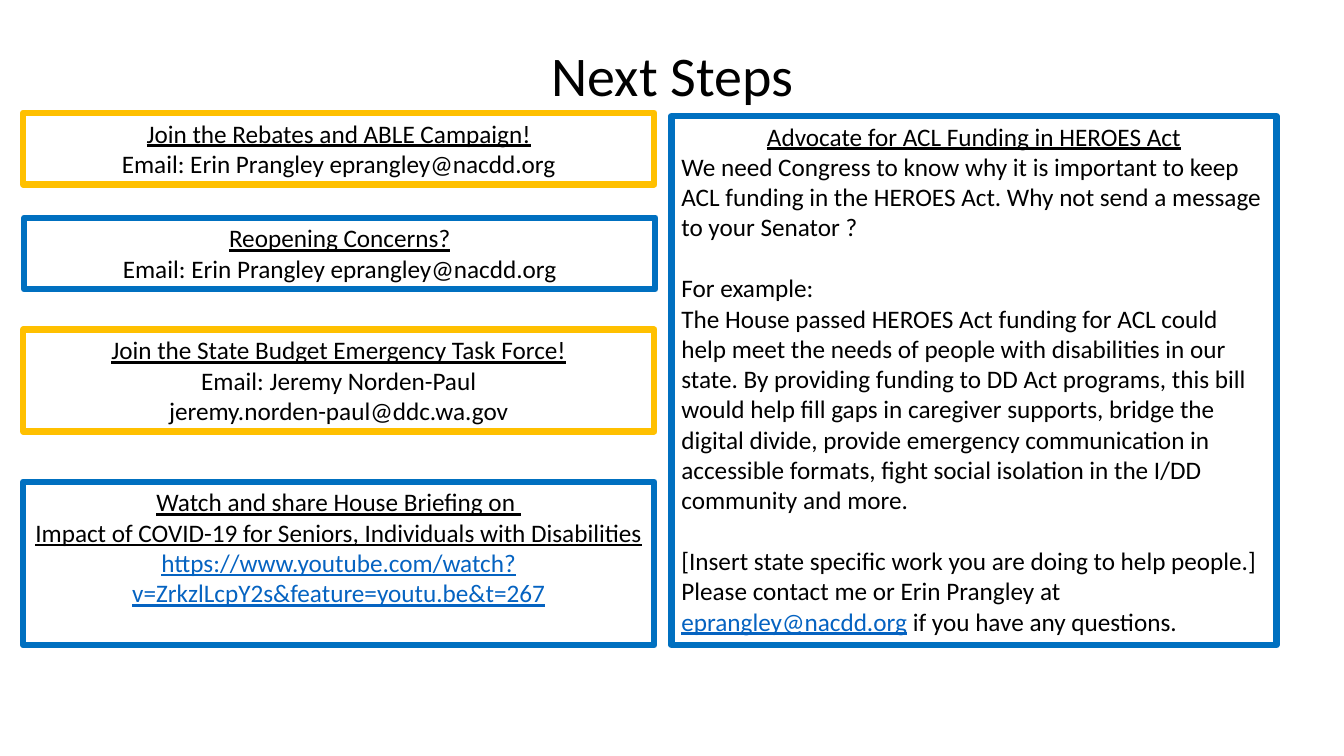
from dataclasses import dataclass

from pptx import Presentation
from pptx.dml.color import RGBColor
from pptx.enum import text as txt
from pptx.util import Inches, Pt

FONT = "Calibri"
BLACK, BLUE, GOLD, LINK = "000000", "0070C0", "FFC000", "0563C1"
BODY_SIZE = 18
BLANK_LINE = 22
CENTER, LEFT = txt.PP_ALIGN.CENTER, txt.PP_ALIGN.LEFT


@dataclass
class Passage:
    """A paragraph: plain text, then an optional link-coloured part and tail."""
    text: str
    underline: bool = False
    link: str = ""
    tail: str = ""
    align: int = CENTER
    space_before: float = 0


@dataclass
class Panel:
    left: float
    top: float
    width: float
    height: float
    border: str
    passages: list[Passage]


def rgb(value: str) -> RGBColor:
    return RGBColor.from_string(value)


def style_run(run, size: float, color: str = BLACK, underline: bool = False) -> None:
    run.font.name = FONT
    run.font.size = Pt(size)
    run.font.color.rgb = rgb(color)
    run.font.underline = underline


def write_passage(paragraph, passage: Passage) -> None:
    paragraph.text = passage.text
    paragraph.alignment = passage.align
    if passage.space_before:
        paragraph.space_before = Pt(passage.space_before)
    for run in paragraph.runs:
        style_run(run, BODY_SIZE, underline=passage.underline)
    for extra, color, underline in ((passage.link, LINK, True), (passage.tail, BLACK, False)):
        if extra:
            run = paragraph.add_run()
            run.text = extra
            style_run(run, BODY_SIZE, color, underline)


def draw_panel(slide, panel: Panel) -> None:
    box = slide.shapes.add_textbox(Inches(panel.left), Inches(panel.top),
                                   Inches(panel.width), Inches(panel.height))
    box.line.color.rgb = rgb(panel.border)
    box.line.width = Pt(4.5)
    frame = box.text_frame
    frame.word_wrap = True
    for index, passage in enumerate(panel.passages):
        paragraph = frame.add_paragraph() if index else frame.paragraphs[0]
        write_passage(paragraph, passage)


def draw_title(slide, heading: str) -> None:
    title = slide.shapes.title
    title.left, title.top = Inches(5.32), Inches(0.35)
    title.width, title.height = Inches(2.7), Inches(0.77)
    title.text_frame.text = heading
    title.text_frame.word_wrap = False
    title.text_frame.paragraphs[0].alignment = CENTER
    style_run(title.text_frame.paragraphs[0].runs[0], 40)


ERIN = "Email: Erin Prangley eprangley@nacdd.org"

PANELS = [
    Panel(6.66, 1.15, 6, 5.25, BLUE, [
        Passage("Advocate for ACL Funding in HEROES Act", underline=True),
        Passage("We need Congress to know why it is important to keep ACL funding in the "
                "HEROES Act. Why not send a message to your Senator ?", align=LEFT),
        Passage("For example:", align=LEFT, space_before=BLANK_LINE),
        Passage("The House passed HEROES Act funding for ACL could help meet the needs of "
                "people with disabilities in our state. By providing funding to DD Act "
                "programs, this bill would help fill gaps in caregiver supports, bridge the "
                "digital divide, provide emergency communication in accessible formats, "
                "fight social isolation in the I/DD community and more.", align=LEFT),
        Passage("[Insert state specific work you are doing to help people.]",
                align=LEFT, space_before=BLANK_LINE),
        Passage("Please contact me or Erin Prangley at ", link="eprangley@nacdd.org",
                tail=" if you have any questions.", align=LEFT),
    ]),
    Panel(0.23, 1.12, 6.26, 0.71, GOLD, [
        Passage("Join the Rebates and ABLE Campaign!", underline=True),
        Passage(ERIN),
    ]),
    Panel(0.24, 2.16, 6.26, 0.71, BLUE, [
        Passage("Reopening Concerns?", underline=True),
        Passage(ERIN),
    ]),
    Panel(0.23, 3.27, 6.26, 1.01, GOLD, [
        Passage("Join the State Budget Emergency Task Force!", underline=True),
        Passage("Email: Jeremy Norden-Paul\njeremy.norden-paul@ddc.wa.gov"),
    ]),
    Panel(0.23, 4.78, 6.26, 1.62, BLUE, [
        Passage("Watch and share House Briefing on \n"
                "Impact of COVID-19 for Seniors, Individuals with Disabilities ",
                underline=True,
                link="https://www.youtube.com/watch?v=ZrkzlLcpY2s&feature=youtu.be&t=267"),
    ]),
]


def main() -> None:
    deck = Presentation()
    deck.slide_width, deck.slide_height = Inches(13.33), Inches(7.5)
    slide = deck.slides.add_slide(deck.slide_layouts.get_by_name("Title Only"))
    draw_title(slide, "Next Steps")
    for panel in PANELS:
        draw_panel(slide, panel)
    deck.save("out.pptx")


if __name__ == "__main__":
    main()
